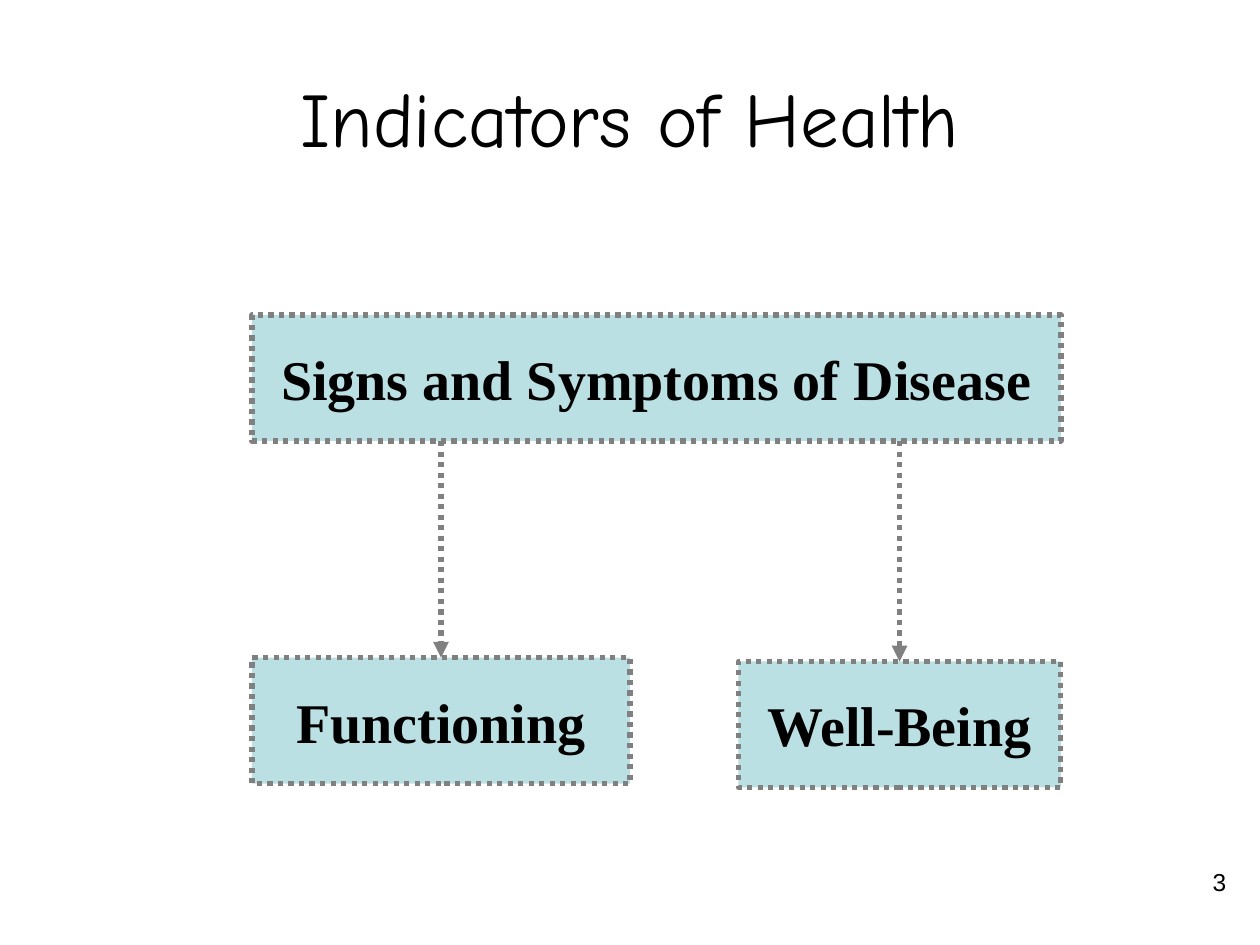
"""Build the Indicators of Health slide."""
from lxml.etree import SubElement
from pptx import Presentation
from pptx.dml.color import RGBColor
from pptx.enum.dml import MSO_LINE as Dash
from pptx.enum.shapes import MSO_CONNECTOR as Connector, MSO_SHAPE as Shape
from pptx.enum.text import MSO_ANCHOR as Anchor, PP_ALIGN as Align
from pptx.oxml.ns import qn
from pptx.util import Inches, Pt

COLS, ROWS = 10, 7.5
CELL = Inches(1)
BLACK, GREY, TEAL = "000000", "808080", "BBE0E3"


def rgb(color):
    """Turn a hex string into a colour."""
    return RGBColor.from_string(color)


def grid(*cells):
    """Turn grid columns and rows into slide lengths."""
    return [round(n * CELL) for n in cells]


def set_text(shape, text, font, size, align, anchor, bold=False, wrap=True):
    """Write one styled paragraph into a shape."""
    tf = shape.text_frame
    tf.word_wrap, tf.vertical_anchor = wrap, anchor
    p = tf.paragraphs[0]
    p.text, p.alignment = text, align
    p.font.name, p.font.size, p.font.bold = font, Pt(size), bold
    p.font.color.rgb = rgb(BLACK)


def set_dotted(line):
    """Give a line the dotted grey style of the diagram."""
    line.color.rgb = rgb(GREY)
    line.width = Pt(3)
    line.dash_style = Dash.ROUND_DOT


def add_label(s, box, text, font, size, align, anchor):
    """Place plain text in the given box."""
    tb = s.shapes.add_textbox(*grid(*box))
    set_text(tb, text, font, size, align, anchor)


def add_node(s, box, text):
    """Place a dotted, filled box with a bold caption."""
    sp = s.shapes.add_shape(Shape.RECTANGLE, *grid(*box))
    sp.shadow.inherit = False
    sp.fill.solid()
    sp.fill.fore_color.rgb = rgb(TEAL)
    set_dotted(sp.line)
    set_text(sp, text, "Times New Roman", 32, Align.CENTER, Anchor.MIDDLE,
             bold=True, wrap=False)


def add_arrow(s, x, top, bottom):
    """Draw a dotted arrow straight down."""
    cx = s.shapes.add_connector(Connector.STRAIGHT, *grid(x, top, x, bottom))
    set_dotted(cx.line)
    SubElement(cx.line._get_or_add_ln(), qn("a:tailEnd"), type="triangle")
    SubElement(cx._element.spPr, qn("a:effectLst"))


def add_diagram(s, box):
    """Place the parent box, its two children and the arrows to them."""
    left, top, width, height = box
    node_h = 1
    children = [
        ("Functioning", left, top + 2.72, 3, left + 1.5),
        ("Well-Being", left + width - 2.56, top + height - node_h, 2.56,
         left + width - 1.28),
    ]
    add_node(s, (left, top, width, node_h), "Signs and Symptoms of Disease")
    for text, x, y, w, arrow_x in children:
        add_node(s, (x, y, w, node_h), text)
        add_arrow(s, arrow_x, top + node_h, y)


def main():
    """Build and save the slide."""
    prs = Presentation()
    prs.slide_width, prs.slide_height = grid(COLS, ROWS)
    s = prs.slides.add_slide(prs.slide_layouts[6])
    add_label(s, (0, 0.3, COLS, 1.25), "Indicators of Health", "Comic Neue",
              44, Align.CENTER, Anchor.MIDDLE)
    add_label(s, (8.06, 6.83, 1.77, 0.52), "3", "Arial", 14,
              Align.RIGHT, Anchor.TOP)
    add_diagram(s, (2, 2.5, 6.42, 3.75))
    prs.save("out.pptx")


if __name__ == "__main__":
    main()
